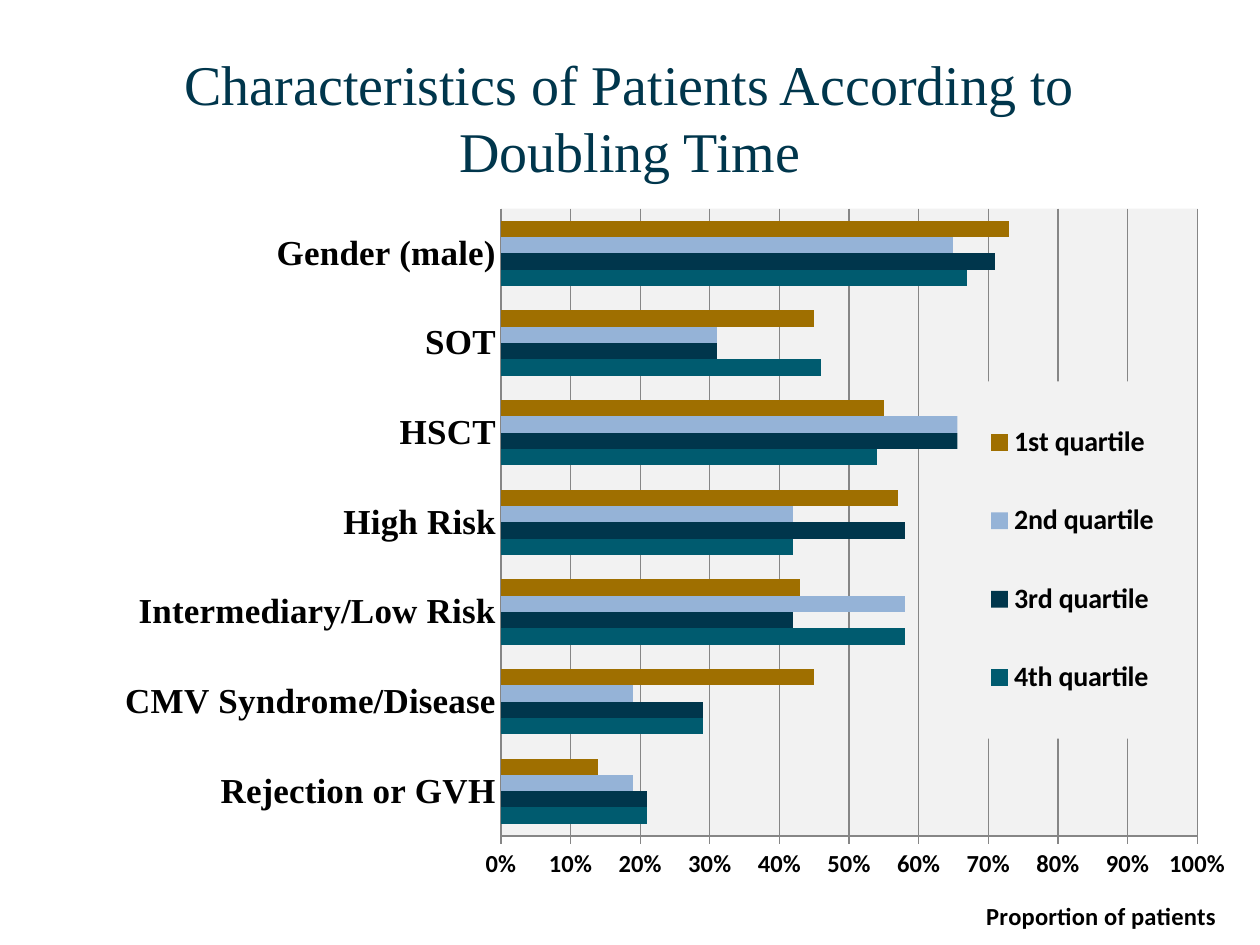
from dataclasses import dataclass

from lxml import etree
from pptx import Presentation
from pptx.chart.data import CategoryChartData
from pptx.dml.color import RGBColor
from pptx.enum import chart as ch, text
from pptx.oxml import parse_xml
from pptx.oxml.ns import nsdecls, qn
from pptx.util import Inches, Pt


@dataclass(frozen=True)
class Theme:
    serif: str = "Times New Roman"
    sans: str = "Calibri"
    navy: str = "00364C"
    black: str = "000000"
    grid: str = "868686"
    panel: str = "F2F2F2"
    title_size: int = 32
    category_size: int = 20
    legend_size: int = 16
    axis_size: int = 14


THEME = Theme()

CATEGORIES = ["Rejection or GVH", "CMV Syndrome/Disease", "Intermediary/Low Risk",
              "High Risk", "HSCT", "SOT", "Gender (male)"]
QUARTILES = [
    ("4th quartile", "005B6F", (0.21, 0.29, 0.58, 0.42, 0.54, 0.46, 0.67)),
    ("3rd quartile", THEME.navy, (0.21, 0.29, 0.42, 0.58, 0.69, 0.31, 0.71)),
    ("2nd quartile", "95B3D7", (0.19, 0.19, 0.58, 0.42, 0.69, 0.31, 0.65)),
    ("1st quartile", "9F6F00", (0.14, 0.45, 0.43, 0.57, 0.55, 0.45, 0.73)),
]


def rgb(value):
    return RGBColor.from_string(value)


def style_font(font, size, name=THEME.sans, color=THEME.black, bold=True):
    font.size, font.name, font.bold = Pt(size), name, bold
    font.color.rgb = rgb(color)


def set_layout(element, index, inner=False, **fractions):
    """Place a chart part by fractions of the chart area."""
    for old in element.findall(qn("c:layout")):
        element.remove(old)
    layout = parse_xml(f"<c:layout {nsdecls('c')}><c:manualLayout/></c:layout>")
    settings = {"layoutTarget": "inner"} if inner else {}
    settings.update(xMode="edge", yMode="edge", **fractions)
    for tag, value in settings.items():
        etree.SubElement(layout[0], qn(f"c:{tag}")).set("val", str(value))
    element.insert(index, layout)


def panel_fill():
    return parse_xml(
        f"<c:spPr {nsdecls('c', 'a')}><a:solidFill><a:srgbClr val='{THEME.panel}'/>"
        "</a:solidFill><a:ln><a:noFill/></a:ln></c:spPr>")


def add_title(slide, wording):
    title = slide.shapes.title
    title.left, title.top = Inches(0.5), Inches(0.3)
    title.width, title.height = Inches(9), Inches(1.25)
    title.text_frame.text = wording
    title.text_frame.vertical_anchor = text.MSO_ANCHOR.MIDDLE
    paragraph = title.text_frame.paragraphs[0]
    paragraph.alignment = text.PP_ALIGN.CENTER
    style_font(paragraph.font, THEME.title_size, THEME.serif, THEME.navy, bold=False)


def format_axes(chart):
    categories, proportion = chart.category_axis, chart.value_axis
    for axis in (categories, proportion):
        axis.format.line.color.rgb = rgb(THEME.grid)
        axis.minor_tick_mark = ch.XL_TICK_MARK.NONE
    categories.major_tick_mark = ch.XL_TICK_MARK.NONE
    categories.has_major_gridlines = False
    style_font(categories.tick_labels.font, THEME.category_size, THEME.serif)

    proportion.minimum_scale, proportion.maximum_scale = 0, 1
    proportion.major_unit = 0.1
    proportion.major_tick_mark = ch.XL_TICK_MARK.OUTSIDE
    proportion.has_major_gridlines = True
    proportion.major_gridlines.format.line.color.rgb = rgb(THEME.grid)
    proportion.tick_labels.number_format = "0%"
    proportion.tick_labels.number_format_is_linked = False
    style_font(proportion.tick_labels.font, THEME.axis_size)

    caption = proportion.axis_title
    caption.text_frame.text = "Proportion of patients"
    style_font(caption.text_frame.paragraphs[0].font, THEME.axis_size)
    set_layout(caption._element, 1, x=0.79, y=0.94)


def format_legend(chart):
    chart.has_legend = True
    legend = chart.legend
    legend.position = ch.XL_LEGEND_POSITION.RIGHT
    legend.include_in_layout = False
    style_font(legend.font, THEME.legend_size)
    set_layout(legend._element, 1, x=0.77, y=0.25, w=0.19, h=0.48)
    legend._element.find(qn("c:overlay")).addnext(panel_fill())


def add_quartile_chart(slide):
    data = CategoryChartData(number_format="0%")
    data.categories = CATEGORIES
    for name, _, values in QUARTILES:
        data.add_series(name, values)
    chart = slide.shapes.add_chart(
        ch.XL_CHART_TYPE.BAR_CLUSTERED, Inches(0.2), Inches(1.55),
        Inches(9.61), Inches(5.91), data).chart
    chart.has_title = False
    style_font(chart.font, 10, bold=False)

    # Bars
    plot = chart.plots[0]
    plot.gap_width, plot.overlap = 150, 0
    plot.vary_by_categories = False
    for series, (_, color, _) in zip(plot.series, QUARTILES):
        series.format.fill.solid()
        series.format.fill.fore_color.rgb = rgb(color)

    format_axes(chart)
    format_legend(chart)

    # Plot area
    plot_area = chart._chartSpace.chart.plotArea
    set_layout(plot_area, 0, inner=True, x=0.393, y=0.018, w=0.575, h=0.843)
    plot_area.append(panel_fill())


def main():
    deck = Presentation()
    deck.slide_width, deck.slide_height = Inches(10), Inches(7.5)
    slide = deck.slides.add_slide(deck.slide_layouts[5])
    add_title(slide, "Characteristics of Patients According to Doubling Time")
    add_quartile_chart(slide)
    deck.save("out.pptx")


if __name__ == "__main__":
    main()
